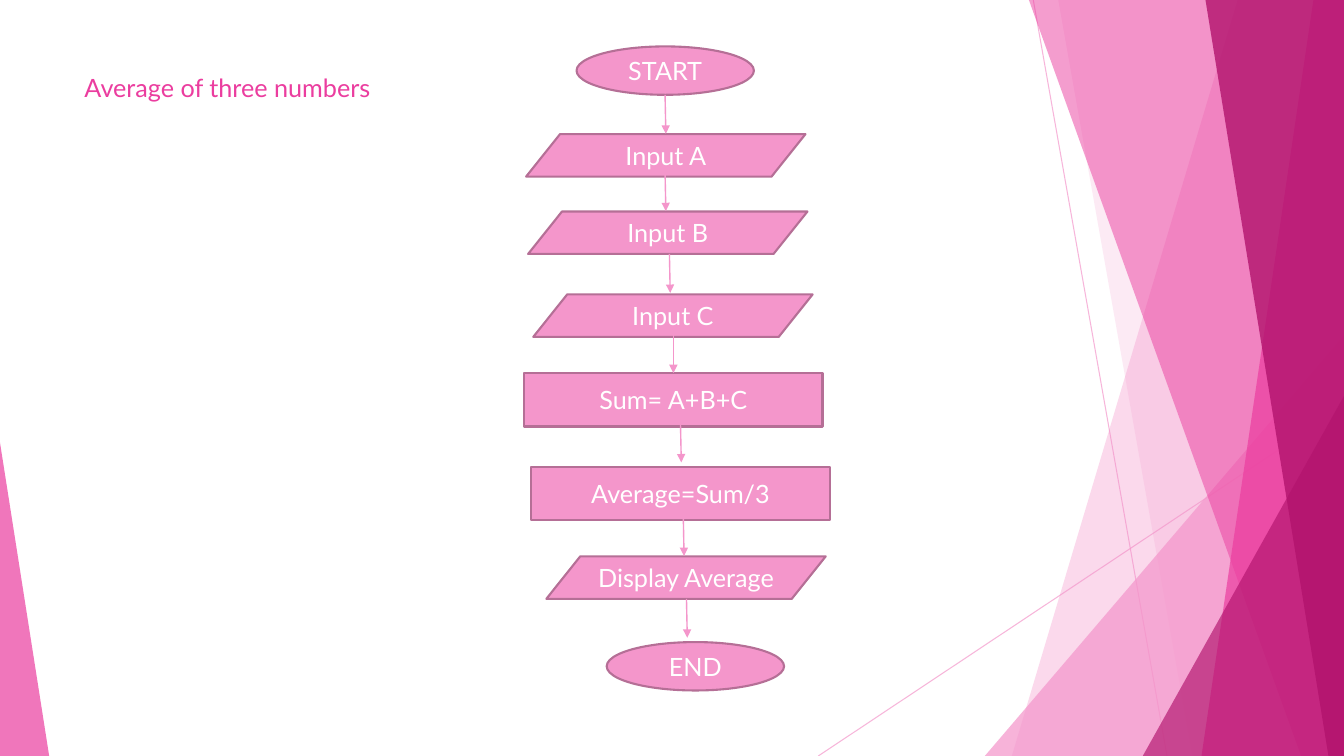
from pptx import Presentation
from pptx import util as u
from pptx.dml.color import RGBColor
from pptx.enum import shapes, text
from pptx.oxml.ns import qn
from lxml import etree

Cm, Pt = u.Cm, u.Pt
KIND = shapes.MSO_SHAPE

WIDTH, HEIGHT = 33.87, 19.05
FONT, SIZE = "Lato", 18
LIGHT, PINK, DARK, EDGE, WHITE = "F496CB", "EB3D9F", "B2136D", "B56F96", "FFFFFF"

TITLE = "Average of three numbers"

# kind: width, height, adjustment
NODE_KINDS = {
    KIND.OVAL: (4.47, 1.22, None),
    KIND.PARALLELOGRAM: (7.04, 1.07, 0.799),
    KIND.RECTANGLE: (7.52, 1.35, None),
}
# label, kind, left, top
NODES = [
    ("START", KIND.OVAL, 14.53, 1.17),
    ("Input A", KIND.PARALLELOGRAM, 13.26, 3.38),
    ("Input B", KIND.PARALLELOGRAM, 13.31, 5.33),
    ("Input C", KIND.PARALLELOGRAM, 13.44, 7.42),
    ("Sum= A+B+C", KIND.RECTANGLE, 13.21, 9.4),
    ("Average=Sum/3", KIND.RECTANGLE, 13.39, 11.76),
    ("Display Average", KIND.PARALLELOGRAM, 13.77, 14.02),
    ("END", KIND.OVAL, 15.29, 16.18),
]
ARROW_STARTS = [(16.76, 2.39), (16.76, 4.34), (16.87, 6.4), (16.97, 8.38),
                (17.15, 10.67), (17.22, 13.03), (17.3, 15.09)]
ARROW_DX, ARROW_DY = 0.02, 0.98

RAYS = [(26.04, 0, 29.41, HEIGHT), (WIDTH, 10.24, 20.62, HEIGHT)]
# bands: x at top, x at bottom; wedges: left, top, width, apex (0 left, 1 right)
FACETS = [
    ("band", (31.19, 25.5), LIGHT, 36),
    ("band", (26.67, 30.05), LIGHT, 20),
    ("wedge", (24.82, 8.46, 9.05, 1), LIGHT, 72),
    ("band", (25.93, 32.79), PINK, 50),
    ("band", (33.1, 30.28), PINK, 70),
    ("band", (30.38, 33.48), DARK, 80),
    ("wedge", (28.8, 9.98, 5.07, 1), DARK, 66),
    ("wedge", (0, 11.15, 1.24, 0), PINK, 70),
]


def rgb(color):
    return RGBColor.from_string(color)


def set_opacity(s, percent):
    for clr in s._element.spPr.iter(qn("a:srgbClr")):
        etree.SubElement(clr, qn("a:alpha"), val=str(percent * 1000))


def fill_shape(s, color):
    s.shadow.inherit = False
    s.fill.solid()
    s.fill.fore_color.rgb = rgb(color)


def write(s, label, color, align, anchor):
    tf = s.text_frame
    tf.word_wrap = True
    tf.vertical_anchor = anchor
    p = tf.paragraphs[0]
    p.text = label
    p.alignment = align
    p.font.name, p.font.size = FONT, Pt(SIZE)
    p.font.color.rgb = rgb(color)


def add_line(sl, x1, y1, x2, y2, width):
    c = sl.shapes.add_connector(shapes.MSO_CONNECTOR.STRAIGHT,
                                Cm(x1), Cm(y1), Cm(x2), Cm(y2))
    c.line.color.rgb = rgb(LIGHT)
    c.line.width = Pt(width)
    etree.SubElement(c._element.spPr, qn("a:effectLst"))
    return c


def add_band(sl, top_x, bottom_x):
    """Area between a slanted edge and the right side of the slide."""
    fb = sl.shapes.build_freeform(Cm(top_x), 0)
    corners = [(WIDTH, 0), (WIDTH, HEIGHT), (bottom_x, HEIGHT)]
    fb.add_line_segments([(Cm(x), Cm(y)) for x, y in corners], close=True)
    return fb.convert_to_shape()


def add_wedge(sl, left, top, width, apex):
    """Right-angled triangle standing on the bottom of the slide."""
    s = sl.shapes.add_shape(KIND.ISOSCELES_TRIANGLE, Cm(left), Cm(top),
                            Cm(width), Cm(HEIGHT - top))
    s.adjustments[0] = apex
    return s


def add_backdrop(sl):
    for ray in RAYS:
        set_opacity(add_line(sl, *ray, 0.75), 70)
    makers = {"band": add_band, "wedge": add_wedge}
    for kind, geometry, color, opacity in FACETS:
        s = makers[kind](sl, *geometry)
        fill_shape(s, color)
        s.line.fill.background()
        set_opacity(s, opacity)


def add_node(sl, label, kind, left, top):
    width, height, adjustment = NODE_KINDS[kind]
    s = sl.shapes.add_shape(kind, Cm(left), Cm(top), Cm(width), Cm(height))
    if adjustment is not None:
        s.adjustments[0] = adjustment
    fill_shape(s, LIGHT)
    s.line.color.rgb = rgb(EDGE)
    s.line.width = Pt(1.5)
    write(s, label, WHITE, text.PP_ALIGN.CENTER, text.MSO_ANCHOR.MIDDLE)
    return s


def add_arrow(sl, x, y):
    c = add_line(sl, x, y, x + ARROW_DX, y + ARROW_DY, 1)
    etree.SubElement(c.line._get_or_add_ln(), qn("a:tailEnd"), type="triangle")
    return c


def main():
    prs = Presentation()
    prs.slide_width, prs.slide_height = Cm(WIDTH), Cm(HEIGHT)
    sl = prs.slides.add_slide(prs.slide_layouts[6])
    add_backdrop(sl)
    title = sl.shapes.add_textbox(Cm(1.88), Cm(1.7), Cm(23.88), Cm(1.09))
    write(title, TITLE, PINK, text.PP_ALIGN.LEFT, text.MSO_ANCHOR.TOP)
    nodes = {node[0]: add_node(sl, *node) for node in NODES}
    arrows = [add_arrow(sl, *start) for start in ARROW_STARTS]
    arrows[3].end_connect(nodes["Sum= A+B+C"], 0)
    prs.save("out.pptx")


if __name__ == "__main__":
    main()
